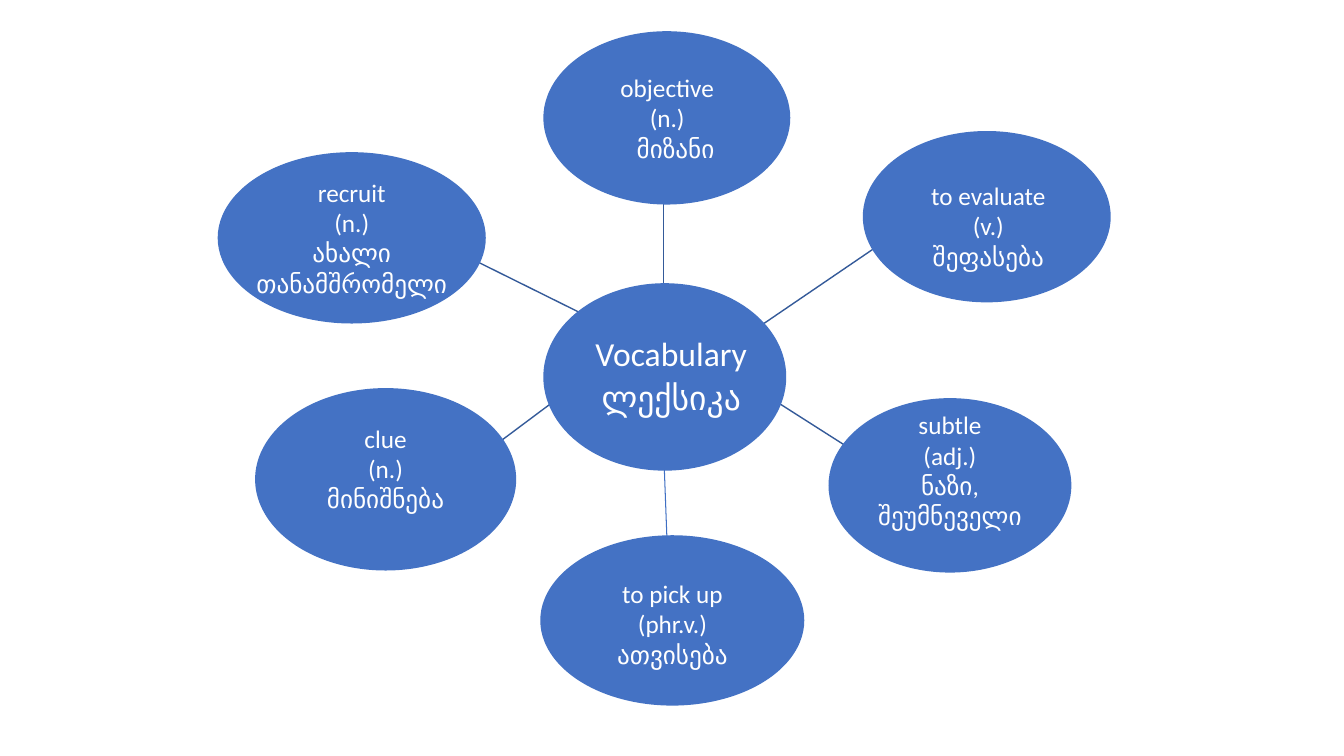
import pptx
import pptx.util
import pptx.dml.color
import pptx.enum.shapes
import pptx.enum.text
import pptx.oxml.ns
import lxml.etree

Pt = pptx.util.Pt
RGB = pptx.dml.color.RGBColor.from_string
THEME = {
    "oval": RGB("4472C4"),
    "spoke": RGB("345A99"),
    "lower_spoke": RGB("3F6FC3"),
    "text": RGB("FFFFFF"),
    "latin": "Calibri",
    "georgian": "Arial",
    "title_size": Pt(24),
    "word_size": Pt(18),
}

presentation = pptx.Presentation()
presentation.slide_width = Pt(960)
presentation.slide_height = Pt(540)
slide = presentation.slides.add_slide(presentation.slide_layouts[6])


def add_oval(bounds):
    oval = slide.shapes.add_shape(
        pptx.enum.shapes.MSO_SHAPE.OVAL, *[Pt(value) for value in bounds])
    oval.shadow.inherit = False
    oval.fill.solid()
    oval.fill.fore_color.rgb = THEME["oval"]
    oval.line.fill.background()
    return oval


def write_lines(shape, lines, size, last_font):
    frame = shape.text_frame
    frame.word_wrap = True
    frame.text = "\n".join(lines)
    for paragraph in frame.paragraphs:
        paragraph.alignment = pptx.enum.text.PP_ALIGN.CENTER
        paragraph.font.size = size
        for run in paragraph.runs:
            run.font.size = size
            run.font.name = THEME["latin"]
            run.font.color.rgb = THEME["text"]
    frame.paragraphs[-1].runs[0].font.name = last_font
    return frame


spokes = [
    (473.8, 141.1, 473.8, 226.8, "spoke", 1),
    (539.3, 235.4, 636.5, 169.2, "spoke", 1),
    (399.6, 283.7, 345.6, 324, "spoke", 1),
    (415.4, 223.9, 328.3, 180.7, "spoke", 1),
    (610.6, 322.6, 547.2, 282.2, "spoke", 1),
    (474.5, 334.1, 476.6, 390.2, "lower_spoke", 0.75),
]
for *ends, colour, width in spokes:
    spoke = slide.shapes.add_connector(
        pptx.enum.shapes.MSO_CONNECTOR.STRAIGHT, *[Pt(value) for value in ends])
    spoke.line.color.rgb = THEME[colour]
    spoke.line.width = Pt(width)
    lxml.etree.SubElement(spoke.element.spPr, pptx.oxml.ns.qn("a:effectLst"))

words = [
    ((388.1, 22.3, 176.4, 123.8), (415.4, 48.2, 122.4, 72.7),
     ["objective", "(n.)", "მიზანი"]),
    ((616.3, 93.6, 177.1, 122.4), (647.3, 125.3, 117.4, 72.7),
     ["to evaluate", "(v.)", "შეფასება"]),
    ((182.2, 277.2, 186.5, 130.3), (212.4, 298.8, 126, 72.7),
     ["clue", "(n.)", "მინიშნება"]),
    ((155.5, 108.7, 191.5, 122.4), (172.1, 123.1, 158.4, 116.6),
     ["recruit", "(n.)", "ახალი თანამშრომელი"]),
    ((385.9, 382.3, 188.6, 121.7), (409, 409.7, 142.6, 72.7),
     ["to pick up", "(phr.v.)", "ათვისება"]),
]
for oval_bounds, text_bounds, lines in words:
    add_oval(oval_bounds)
    label = slide.shapes.add_textbox(*[Pt(value) for value in text_bounds])
    frame = write_lines(label, lines, THEME["word_size"], THEME["georgian"])
    if lines[0] == "objective":
        frame.paragraphs[-1].runs[0].font.name = THEME["georgian"]
        frame.paragraphs[-1]._p.get_or_add_pPr().set("marL", str(Pt(12)))

add_oval((388.1, 202.3, 173.5, 133.9))
title = slide.shapes.add_textbox(Pt(421.9), Pt(225.4), Pt(115.2), Pt(88.6))
title_frame = write_lines(
    title, ["Vocabulary", "ლექსიკა"], THEME["title_size"], THEME["latin"])
title_frame.vertical_anchor = pptx.enum.text.MSO_ANCHOR.MIDDLE
title_frame.margin_left = title_frame.margin_right = Pt(0.7)
title_frame.margin_top = title_frame.margin_bottom = Pt(0.7)
for paragraph in title_frame.paragraphs:
    paragraph.line_spacing = 0.9
title_frame.paragraphs[1].space_before = Pt(6)

subtle = add_oval((591.8, 284.4, 173.5, 124.6))
subtle_frame = write_lines(
    subtle, ["subtle", "(adj.)", "ნაზი, შეუმნეველი"],
    THEME["word_size"], THEME["latin"])
subtle_frame.vertical_anchor = pptx.enum.text.MSO_ANCHOR.MIDDLE
subtle_frame.margin_bottom = Pt(25.2)

presentation.save("out.pptx")
